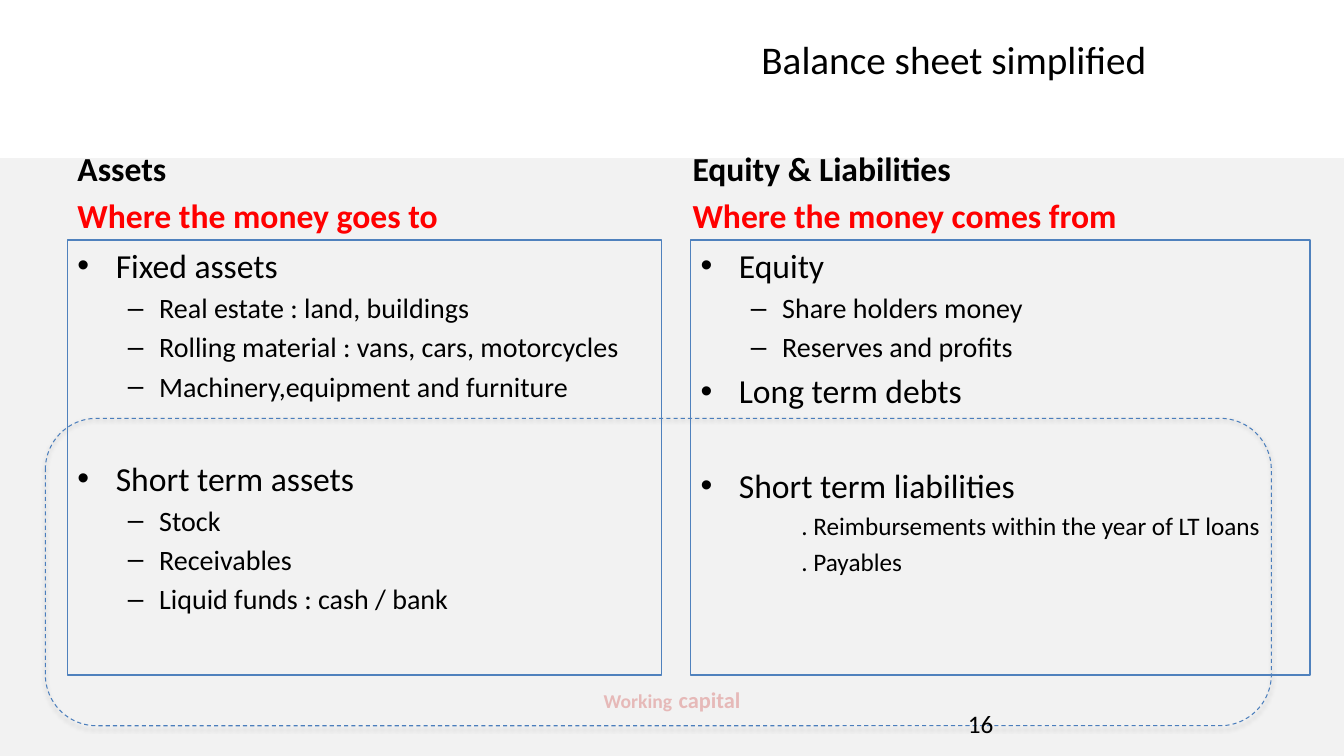
from lxml import etree
from pptx import Presentation
from pptx import util as u
from pptx.dml.color import RGBColor
from pptx.enum import dml, shapes, text
from pptx.oxml import parse_xml
from pptx.oxml.ns import qn

FONT = "Calibri"
NS = "http://schemas.openxmlformats.org/drawingml/2006/main"
LEVELS = [(24, 0.38, -0.38, "•"), (20, 0.81, -0.31, "–"), (18, 1, 0, None)]
GAP = 39

ASSETS = [
    (0, "Fixed assets", 0),
    (1, "Real estate : land, buildings", 0),
    (1, "Rolling material : vans, cars, motorcycles", 0),
    (1, "Machinery,equipment and furniture", 0),
    (0, "Short term assets", GAP),
    (1, "Stock", 0),
    (1, "Receivables", 0),
    (1, "Liquid funds : cash / bank", 0),
]
LIABILITIES = [
    (0, "Equity", 0),
    (1, "Share holders money", 0),
    (1, "Reserves and profits", 0),
    (0, "Long term debts", 0),
    (0, "Short term liabilities", GAP),
    (2, ". Reimbursements within the year of LT loans", 0),
    (2, ". Payables", 0),
]


def color(value):
    return RGBColor.from_string(value)


def add_run(p, words, size, fill="000000", bold=False):
    r = p.add_run()
    r.text = words
    r.font.name = FONT
    r.font.size = u.Pt(size)
    r.font.bold = bold
    r.font.color.rgb = color(fill)


def add_text(s, box, anchor=text.MSO_ANCHOR.TOP, wrap=True):
    tf = s.shapes.add_textbox(*map(u.Inches, box)).text_frame
    tf.word_wrap = wrap
    tf.vertical_anchor = anchor
    return tf


def add_box(s, kind, box, fill=None, line=None, width=1):
    sp = s.shapes.add_shape(kind, *map(u.Inches, box))
    sp.shadow.inherit = False
    if fill:
        sp.fill.solid()
        sp.fill.fore_color.rgb = color(fill)
    else:
        sp.fill.background()
    if line:
        sp.line.color.rgb = color(line)
        sp.line.width = u.Pt(width)
    else:
        sp.line.fill.background()
    return sp


def set_level(p, level):
    size, left, indent, bullet = LEVELS[level]
    p.level = level
    pPr = p._p.get_or_add_pPr()
    pPr.set("marL", str(u.Inches(left)))
    pPr.set("indent", str(u.Inches(indent)))
    if bullet:
        etree.SubElement(pPr, qn("a:buFont")).set("typeface", "Arial")
        etree.SubElement(pPr, qn("a:buChar")).set("char", bullet)
    else:
        etree.SubElement(pPr, qn("a:buNone"))
    return size


def add_heading(s, box, side, question):
    tf = add_text(s, box, text.MSO_ANCHOR.BOTTOM)
    add_run(tf.paragraphs[0], side, 24, bold=True)
    p = tf.add_paragraph()
    p.space_before = u.Pt(4.8)
    add_run(p, question, 24, "FF0000", True)


def add_list(s, box, items):
    sp = add_box(s, shapes.MSO_SHAPE.RECTANGLE, box, line="4F81BD", width=1.25)
    tf = sp.text_frame
    tf.word_wrap = True
    tf.vertical_anchor = text.MSO_ANCHOR.TOP
    for i, (level, words, gap) in enumerate(items):
        p = tf.paragraphs[0] if i == 0 else tf.add_paragraph()
        size = set_level(p, level)
        p.alignment = text.PP_ALIGN.LEFT
        if i:
            p.space_before = u.Pt(gap or 0.2 * size)
        add_run(p, words, size)


def add_working_capital(s, box):
    sp = add_box(s, shapes.MSO_SHAPE.ROUNDED_RECTANGLE, box, line="4B7EBC", width=0.75)
    sp.line.dash_style = dml.MSO_LINE.DASH
    effects = sp._element.spPr.find(qn("a:effectLst"))
    effects.append(parse_xml(
        f'<a:outerShdw xmlns:a="{NS}" blurRad="{u.Pt(3.1)}" dist="{u.Pt(1.8)}" '
        'dir="5400000" rotWithShape="0"><a:srgbClr val="000000">'
        '<a:alpha val="35000"/></a:srgbClr></a:outerShdw>'))


def add_working_capital_label(s, box):
    p = add_text(s, box, wrap=False).paragraphs[0]
    p.alignment = text.PP_ALIGN.CENTER
    for words, size in [("Working", 14), (" ", 20), ("capital", 16)]:
        add_run(p, words, size, "E6B9B8", True)


def add_title(s, box, words):
    p = add_text(s, box).paragraphs[0]
    p.alignment = text.PP_ALIGN.CENTER
    add_run(p, words, 28)


def add_page_number(s, box, number):
    add_run(add_text(s, box).paragraphs[0], number, 18)


def main():
    prs = Presentation()
    prs.slide_width, prs.slide_height = u.Inches(13.33), u.Inches(7.5)
    s = prs.slides.add_slide(prs.slide_layouts[6])
    add_box(s, shapes.MSO_SHAPE.RECTANGLE, (0, 1.57, 13.33, 5.93), "F2F2F2")
    add_working_capital(s, (0.45, 4.15, 12.16, 3.05))
    add_heading(s, (0.67, 1.68, 5.89, 0.7), "Assets", "Where the money goes to")
    add_list(s, (0.67, 2.38, 5.89, 4.32), ASSETS)
    add_heading(s, (6.77, 1.68, 5.89, 0.7), "Equity & Liabilities", "Where the money comes from")
    add_list(s, (6.85, 2.38, 6.14, 4.32), LIABILITIES)
    add_page_number(s, (9.5, 6.98, 3.11, 0.4), "16")
    add_title(s, (6.25, 0.3, 6.42, 0.57), "Balance sheet simplified")
    add_working_capital_label(s, (5.88, 6.7, 1.57, 0.44))
    prs.save("out.pptx")


if __name__ == "__main__":
    main()
